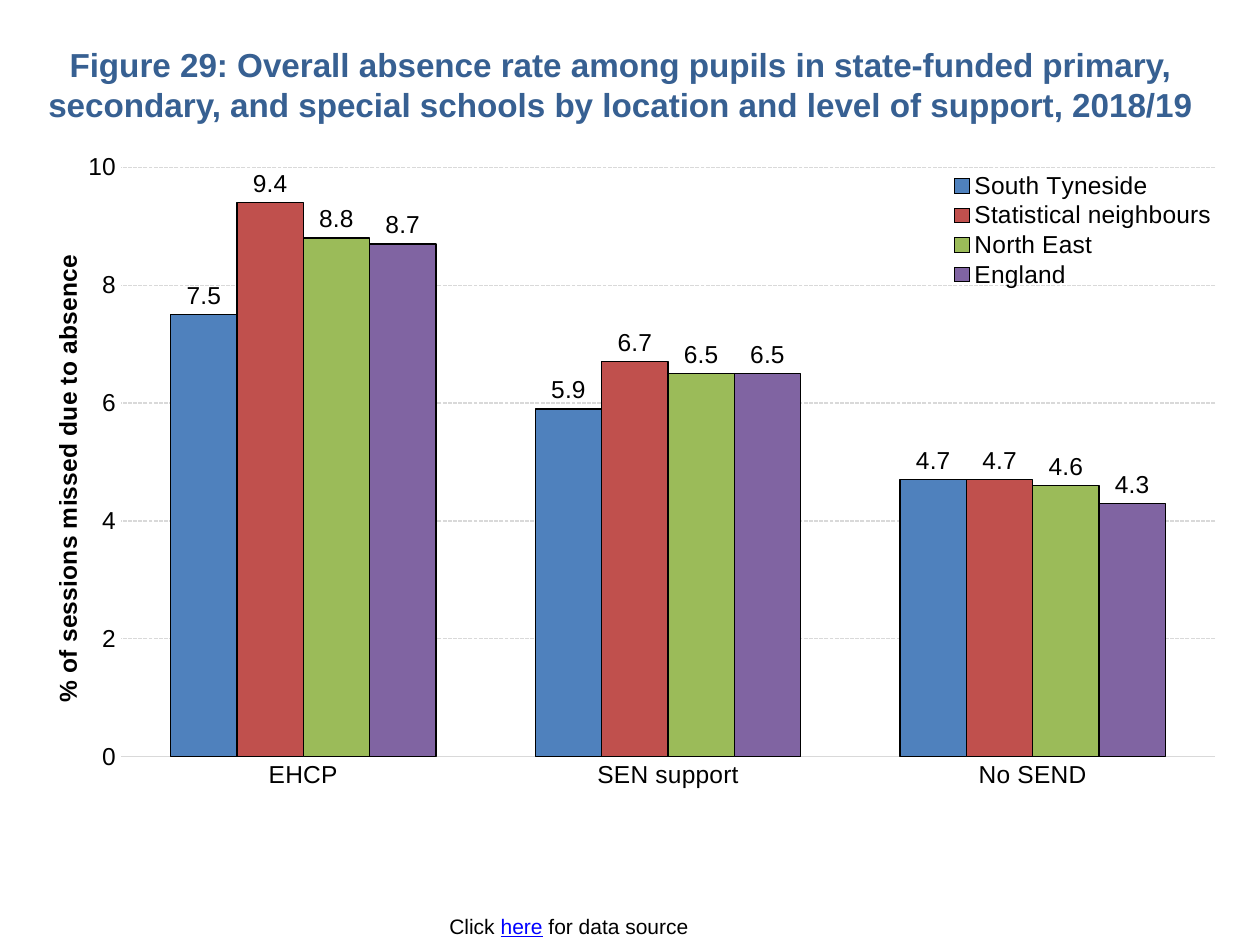
from lxml import etree
from pptx import Presentation
from pptx.chart.data import CategoryChartData
from pptx.dml.color import RGBColor
from pptx.enum.chart import XL_CHART_TYPE, XL_LABEL_POSITION, XL_LEGEND_POSITION, XL_TICK_MARK
from pptx.enum.dml import MSO_LINE
from pptx.enum.text import MSO_ANCHOR, PP_ALIGN
from pptx.oxml.ns import qn
from pptx.util import Pt

COLUMNS = XL_CHART_TYPE.COLUMN_CLUSTERED
OUTSIDE = XL_LABEL_POSITION.OUTSIDE_END
RIGHT = XL_LEGEND_POSITION.RIGHT
NO_TICK = XL_TICK_MARK.NONE
DASH = MSO_LINE.SQUARE_DOT
MIDDLE = MSO_ANCHOR.MIDDLE
CENTER = PP_ALIGN.CENTER

PX = 9144  # 100 px to the inch
COLORS = {"title": "376092", "text": "000000", "link": "0000FF", "grid": "D9D9D9"}
FONT = "Arial"

CATEGORIES = ["EHCP", "SEN support", "No SEND"]
SERIES = [
    ("South Tyneside", "4F81BD", (7.5, 5.9, 4.7)),
    ("Statistical neighbours", "C0504D", (9.4, 6.7, 4.7)),
    ("North East", "9BBB59", (8.8, 6.5, 4.6)),
    ("England", "8064A2", (8.7, 6.5, 4.3)),
]


def rgb(value):
    return RGBColor.from_string(value)


def emu(box):
    return [v * PX for v in box]


def set_font(font, color=COLORS["text"], **values):
    for name, value in {"name": FONT, "bold": False, **values}.items():
        setattr(font, name, value)
    font.color.rgb = rgb(color)


def set_line(line, color):
    line.color.rgb = rgb(color)
    line.width = Pt(0.75)


def set_layout(parent, index, target=None, **fractions):
    """Place a chart part by fractions of the chart area."""
    layout = parent.find(qn("c:layout"))
    if layout is None:
        layout = etree.Element(qn("c:layout"))
        parent.insert(index, layout)
    manual = etree.SubElement(layout, qn("c:manualLayout"))
    values = {"xMode": "edge", "yMode": "edge", **fractions}
    if target:
        values = {"layoutTarget": target, **values}
    for name, value in values.items():
        etree.SubElement(manual, qn("c:" + name)).set("val", str(value))


def add_title(slide, box):
    sp = slide.shapes.title
    sp.left, sp.top, sp.width, sp.height = emu(box)
    tf = sp.text_frame
    tf.word_wrap = True
    tf.vertical_anchor = MIDDLE
    p = tf.paragraphs[0]
    p.alignment = CENTER
    r = p.add_run()
    r.text = ("Figure 29: Overall absence rate among pupils in state-funded primary, "
              "secondary, and special schools by location and level of support, 2018/19")
    set_font(r.font, COLORS["title"], size=Pt(19), bold=True)


def format_axes(chart):
    cat, val = chart.category_axis, chart.value_axis
    for axis in (cat, val):
        axis.major_tick_mark = axis.minor_tick_mark = NO_TICK
        set_font(axis.tick_labels.font, size=Pt(14))
    set_line(cat.format.line, COLORS["grid"])

    for name, value in {"minimum_scale": 0, "maximum_scale": 10, "major_unit": 2}.items():
        setattr(val, name, value)
    val.format.line.fill.background()
    val.tick_labels.number_format = "0"
    val.tick_labels.number_format_is_linked = False
    grid = val.major_gridlines.format.line
    set_line(grid, COLORS["grid"])
    grid.dash_style = DASH

    title = val.axis_title
    r = title.text_frame.paragraphs[0].add_run()
    r.text = "% of sessions missed due to absence"
    set_font(r.font, size=Pt(14), bold=True)
    set_layout(title._element, 1, x=0.01, y=0.15)


def add_absence_chart(slide, box):
    data = CategoryChartData(number_format="0.0")
    data.categories = CATEGORIES
    for name, _, values in SERIES:
        data.add_series(name, values)
    chart = slide.shapes.add_chart(COLUMNS, *emu(box), data).chart
    chart.has_title = False
    set_font(chart.font, size=Pt(10))
    format_axes(chart)

    # Columns and their values
    plot = chart.plots[0]
    plot.gap_width, plot.overlap, plot.vary_by_categories = 150, 0, False
    for series, (_, color, _) in zip(plot.series, SERIES):
        series.format.fill.solid()
        series.format.fill.fore_color.rgb = rgb(color)
        set_line(series.format.line, COLORS["text"])
        labels = series.data_labels
        for name, value in {"show_value": True, "position": OUTSIDE, "number_format": "0.0",
                            "number_format_is_linked": False}.items():
            setattr(labels, name, value)
        set_font(labels.font, size=Pt(14))
    set_layout(chart._chartSpace.chart.plotArea, 0, "inner", x=0.072, y=0.026, w=0.919, h=0.881)

    # Legend over the top right of the plot
    chart.has_legend = True
    legend = chart.legend
    legend.position = RIGHT
    legend.include_in_layout = False
    set_font(legend.font, size=Pt(14))
    set_layout(legend._element, 1, x=0.765, y=0.03, w=0.23, h=0.18)


def add_source_note(slide, box):
    tf = slide.shapes.add_textbox(*emu(box)).text_frame
    tf.word_wrap = True
    p = tf.paragraphs[0]
    p.alignment = CENTER
    for text, color, underline in (("Click ", COLORS["text"], False),
                                   ("here", COLORS["link"], True),
                                   (" for data source", COLORS["text"], False)):
        r = p.add_run()
        r.text = text
        set_font(r.font, color, size=Pt(12), underline=underline)


def main():
    prs = Presentation()
    prs.slide_width, prs.slide_height = 1000 * PX, 750 * PX
    slide = prs.slides.add_slide(prs.slide_layouts[5])
    add_title(slide, (20, 25, 945, 84))
    add_absence_chart(slide, (28, 119, 945, 531))
    add_source_note(slide, (344, 720, 215, 30))
    prs.save("out.pptx")


if __name__ == "__main__":
    main()
